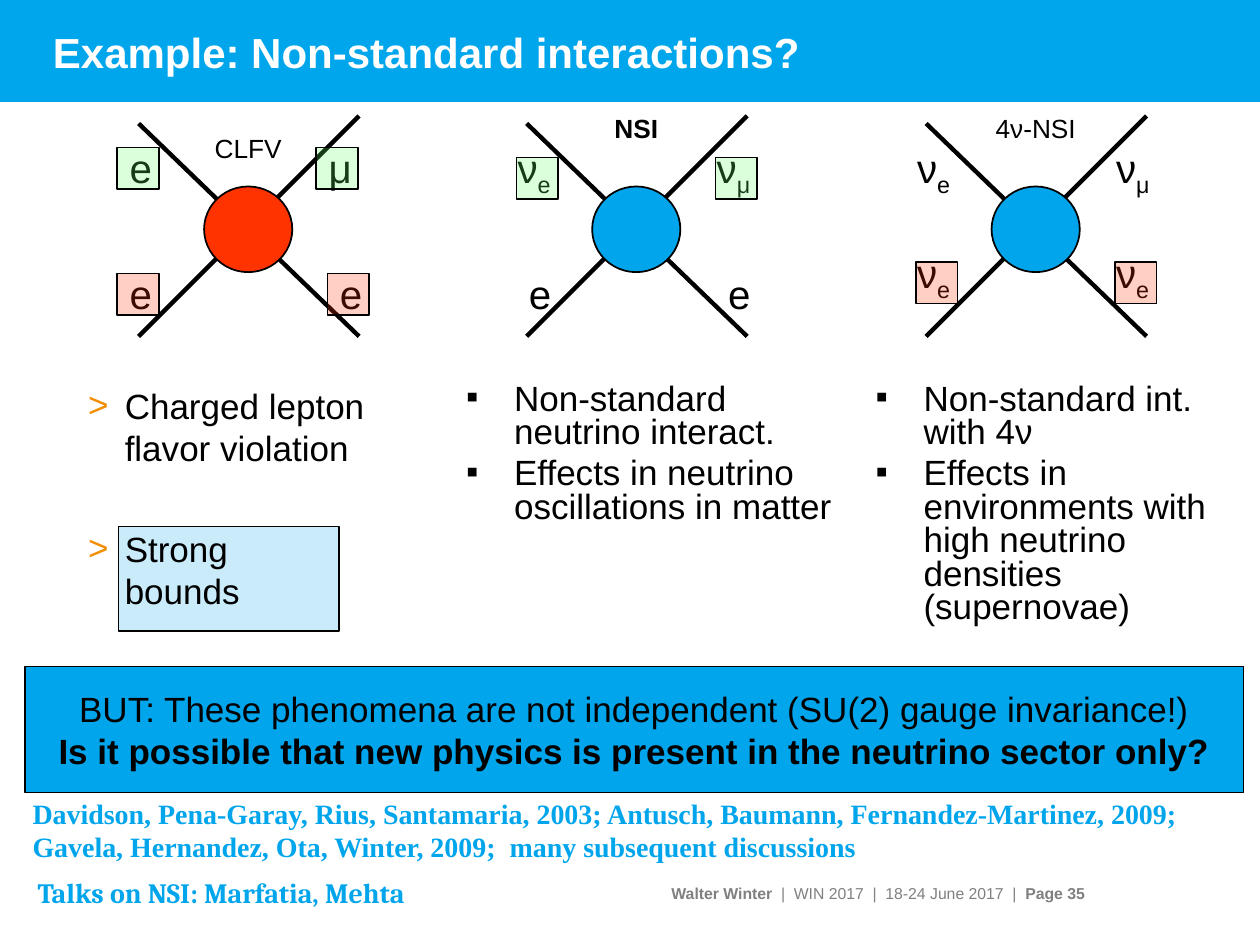
import pptx
import pptx.dml.color
import pptx.enum.shapes
import pptx.enum.text
import pptx.oxml.ns
import pptx.util
from lxml import etree

Inches, Pt = pptx.util.Inches, pptx.util.Pt
SHAPE = pptx.enum.shapes.MSO_SHAPE
ALIGN = pptx.enum.text.PP_ALIGN
ANCHOR = pptx.enum.text.MSO_ANCHOR
qn = pptx.oxml.ns.qn

BLUE, BAND_BLUE, RED, GREEN = "00A5EB", "00A6EB", "FF3300", "66FF66"
BLACK, WHITE, GREY, ORANGE = "000000", "FFFFFF", "808080", "F28E00"

# Content
TITLE = "Example: Non-standard interactions?"
# Each leg: letter, subscript, offset from the diagram's left, top, mark colour
DIAGRAMS = [
    dict(left=1.1, fill=RED, name="CLFV", name_top=1, bold=False, legs=[
        ("e", "", -0.17, 1.09, GREEN), ("μ", "", 1.41, 1.09, GREEN),
        ("e", "", -0.17, 2.09, RED), ("e", "", 1.5, 2.09, RED)]),
    dict(left=4.18, fill=BLUE, name="NSI", name_top=0.84, bold=True, legs=[
        ("ν", "e", -0.17, 1.09, GREEN), ("ν", "μ", 1.41, 1.09, GREEN),
        ("e", "", -0.08, 2.09, None), ("e", "", 1.5, 2.09, None)]),
    dict(left=7.35, fill=BLUE, name="4ν-NSI", name_top=0.84, bold=False, legs=[
        ("ν", "e", -0.17, 1.09, None), ("ν", "μ", 1.41, 1.09, None),
        ("ν", "e", -0.17, 1.92, RED), ("ν", "e", 1.41, 1.92, RED)]),
]
ARROW_STYLE = dict(bullet=">", bullet_color=ORANGE, indent=0.29, gap=34)
SQUARE_STYLE = dict(bullet="▪", bullet_color=BLACK, indent=0.38, gap=4, spacing=0.8)
LISTS = [
    (0.6, 2.92, ARROW_STYLE, ["Charged lepton\vflavor violation", "Strong\vbounds"]),
    (3.6, 3.17, SQUARE_STYLE, ["Non-standard neutrino interact.",
                               "Effects in neutrino oscillations in matter"]),
    (6.85, 3.17, SQUARE_STYLE, ["Non-standard int. with 4ν",
                                "Effects in environments with high neutrino "
                                "densities (supernovae)"]),
]
QUESTION = [
    ("BUT: These phenomena are not independent (SU(2) gauge invariance!)\v", {}),
    ("Is it possible that new physics is present in the neutrino sector only?",
     dict(bold=True)),
]
REFERENCES = ("Davidson, Pena-Garay, Rius, Santamaria, 2003; Antusch, Baumann, "
              "Fernandez-Martinez, 2009; Gavela, Hernandez, Ota, Winter, 2009;  "
              "many subsequent discussions")
TALKS = "Talks on NSI: Marfatia, Mehta"
FOOTER = [("Walter Winter ", dict(bold=True)),
          (" |  WIN 2017  |  18-24 June 2017  |  ", {}),
          ("Page 35", dict(bold=True))]


def rgb(color):
    return pptx.dml.color.RGBColor.from_string(color)


def place(item, left, top, width, height):
    item.left, item.top = Inches(left), Inches(top)
    item.width, item.height = Inches(width), Inches(height)


def write(para, text, size=20, font="Arial", color=BLACK, bold=False,
          align=ALIGN.LEFT, subscript=False):
    """Add text, or a list of (text, format) pairs, to a paragraph."""
    para.alignment = align
    para.space_before = para.space_before or Pt(0)
    pairs = [(text, {})] if isinstance(text, str) else text
    for words, extra in pairs:
        style = dict(bold=bold, subscript=subscript) | extra
        for number, line in enumerate(words.split("\v")):
            if number:
                para.add_line_break()
            if not line:
                continue
            span = para.add_run()
            span.text = line
            span.font.size, span.font.name = Pt(size), font
            span.font.bold = style["bold"]
            span.font.color.rgb = rgb(color)
            if style["subscript"]:
                span.font._element.set("baseline", "-25000")


def add_text(left, top, width, height, text, anchor=ANCHOR.TOP, **style):
    box = page.shapes.add_textbox(*map(Inches, (left, top, width, height)))
    box.text_frame.word_wrap = True
    box.text_frame.vertical_anchor = anchor
    write(box.text_frame.paragraphs[0], text, **style)
    return box


def add_shape(shapes, kind, left, top, width, height, fill, line=BLACK, opacity=100):
    shape = shapes.add_shape(kind, *map(Inches, (left, top, width, height)))
    shape.shadow.inherit = False
    shape.fill.solid()
    shape.fill.fore_color.rgb = rgb(fill)
    if opacity < 100:
        color = shape.fill._xPr.find(qn("a:solidFill"))[0]
        etree.SubElement(color, qn("a:alpha")).set("val", str(opacity * 1000))
    if line:
        shape.line.color.rgb, shape.line.width = rgb(line), Pt(1)
    else:
        shape.line.fill.background()
    return shape


def add_line(shapes, *ends):
    line = shapes.add_connector(pptx.enum.shapes.MSO_CONNECTOR.STRAIGHT,
                                *map(Inches, ends))
    line.line.color.rgb, line.line.width = rgb(BLACK), Pt(2.5)
    etree.SubElement(line._element.spPr, qn("a:effectLst"))


def send_to_back(shape):
    page.shapes._spTree.insert(2, shape._element)


def set_bullet(para, mark, color, indent):
    properties = para._p.get_or_add_pPr()
    properties.set("marL", str(Inches(indent)))
    properties.set("indent", str(-Inches(indent)))
    tint = etree.SubElement(properties, qn("a:buClr"))
    etree.SubElement(tint, qn("a:srgbClr")).set("val", color)
    etree.SubElement(properties, qn("a:buFont")).set("typeface", "Arial")
    etree.SubElement(properties, qn("a:buChar")).set("char", mark)


deck = pptx.Presentation()
deck.slide_width, deck.slide_height = Inches(10), Inches(7.5)
page = deck.slides.add_slide(deck.slide_layouts[4])
title, *bodies = page.placeholders

# Title on its band
place(title, 0.32, 0.11, 9.32, 0.6)
title.text_frame.vertical_anchor = ANCHOR.MIDDLE
title.text_frame.auto_size = pptx.enum.text.MSO_AUTO_SIZE.NONE
write(title.text_frame.paragraphs[0], TITLE, size=24, color=WHITE, bold=True)
send_to_back(add_shape(page.shapes, SHAPE.RECTANGLE, 0.94, 4.18, 1.75, 0.83,
                       BLUE, opacity=21))
send_to_back(add_shape(page.shapes, SHAPE.RECTANGLE, 0, 0, 10, 0.81,
                       BAND_BLUE, line=None))

# Lists
for body, (left, width, look, items) in zip(bodies, LISTS):
    place(body, left, 3, width, 3.14)
    frame = body.text_frame
    frame.vertical_anchor = ANCHOR.TOP
    frame.auto_size = pptx.enum.text.MSO_AUTO_SIZE.NONE
    for number, item in enumerate(items):
        para = frame.add_paragraph() if number else frame.paragraphs[0]
        set_bullet(para, look["bullet"], look["bullet_color"], look["indent"])
        para.line_spacing = look.get("spacing", 1.0)
        para.space_before = Pt(look["gap"] if number else 0)
        write(para, item)
for spare in bodies[len(LISTS):]:
    spare._element.getparent().remove(spare._element)

# Interaction diagrams
for diagram in DIAGRAMS:
    left = diagram["left"]
    vertex = page.shapes.add_group_shape().shapes
    add_line(vertex, left, 2.67, left + 1.75, 0.92)
    add_line(vertex, left, 0.98, left + 1.75, 2.67)
    add_shape(vertex, SHAPE.OVAL, left + 0.52, 1.48, 0.7, 0.68, diagram["fill"])
    add_text(left + 0.16, diagram["name_top"], 1.42, 0.35, diagram["name"],
             size=15, bold=diagram["bold"], align=ALIGN.CENTER)
    for letter, index, offset, top, mark in diagram["legs"]:
        pairs = [(letter, {}), (index, dict(subscript=True))]
        add_text(left + offset, top, 0.67, 0.48, pairs, size=23)
        if mark:
            right, down = (0.09, 0.16) if index else (0, 0.08)
            add_shape(page.shapes, SHAPE.RECTANGLE, left + offset + right,
                      top + down, 0.33, 0.33, mark, opacity=23)

# Question, references and footer
question = add_shape(page.shapes, SHAPE.RECTANGLE, 0.2, 5.29, 9.67, 1, BLUE)
question.text_frame.word_wrap = False
question.text_frame.vertical_anchor = ANCHOR.MIDDLE
write(question.text_frame.paragraphs[0], QUESTION, align=ALIGN.CENTER)

add_text(0.16, 6.27, 9.61, 0.64, REFERENCES, size=16, font="Times New Roman",
         color=BLUE, bold=True)
footer = add_text(0.31, 6.87, 8.3, 0.44, FOOTER, anchor=ANCHOR.MIDDLE, size=9,
                  color=GREY, align=ALIGN.RIGHT)
footer.text_frame.margin_right = 0
talks = add_shape(page.shapes, SHAPE.RECTANGLE, 0.2, 6.9, 3.5, 0.37, WHITE,
                  line=None, opacity=62)
talks.text_frame.vertical_anchor = ANCHOR.TOP
write(talks.text_frame.paragraphs[0], TALKS, size=16, font="Cambria",
      color=BLUE, bold=True)

deck.save("out.pptx")
